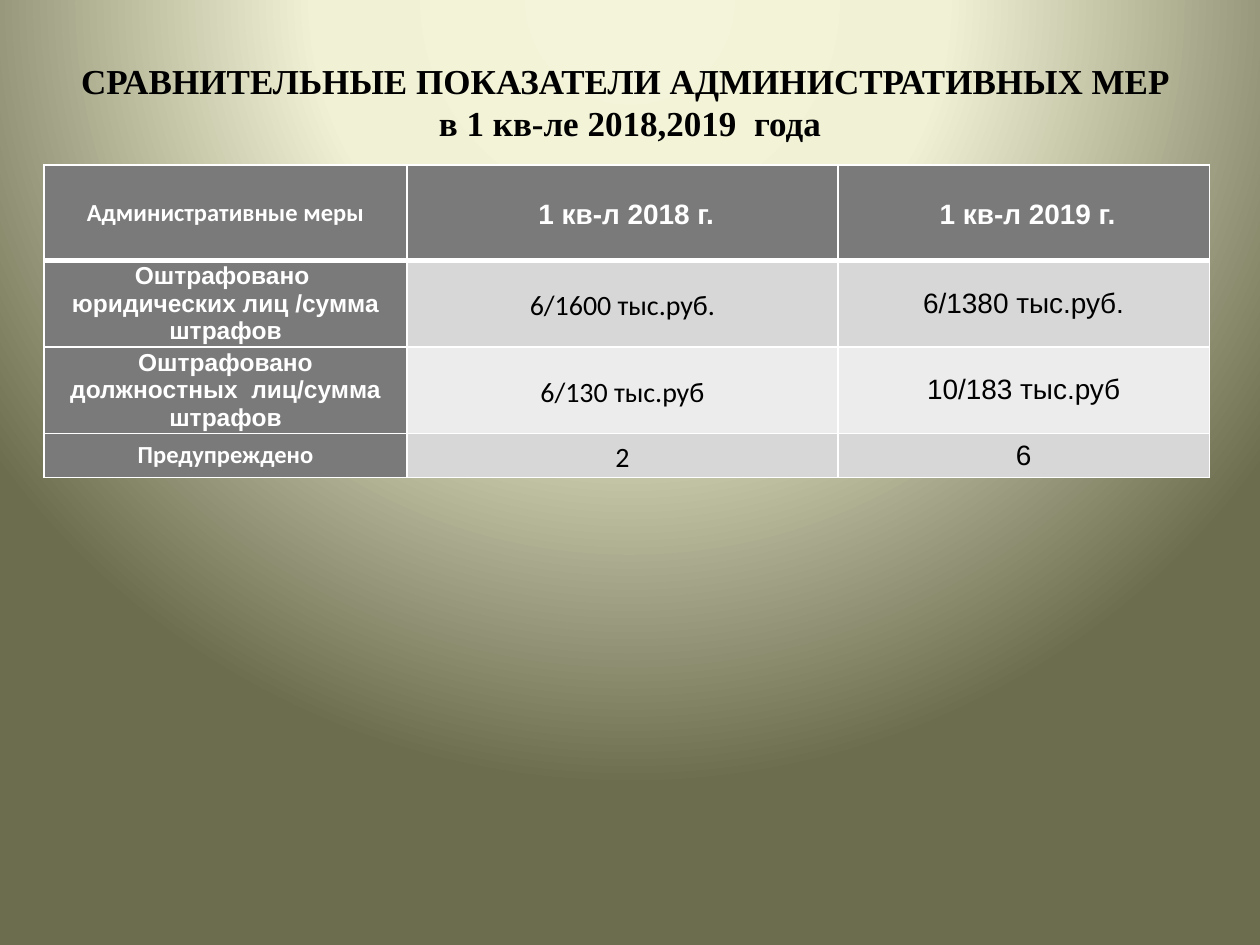
from pptx import Presentation
from pptx.dml.color import RGBColor
from pptx.enum.text import MSO_ANCHOR, PP_ALIGN
from pptx.oxml import parse_xml
from pptx.oxml.ns import nsdecls, qn
from pptx.util import Pt

CENTER = PP_ALIGN.CENTER
MIDDLE = MSO_ANCHOR.MIDDLE
TITLE_ONLY = 5

COLORS = {
    "glow": "F4F4DB", "cream": "F1F1D5", "olive": "6C6C4F",
    "head": "7A7A7A", "band": "D7D7D7", "pale": "ECECEC",
    "white": "FFFFFF", "black": "000000",
}
TITLE = "СРАВНИТЕЛЬНЫЕ ПОКАЗАТЕЛИ АДМИНИСТРАТИВНЫХ МЕР \vв 1 кв-ле 2018,2019  года"
ROWS = [
    ["Административные меры", " 1 кв-л 2018 г.", " 1 кв-л 2019 г."],
    ["Оштрафовано  юридических лиц /сумма штрафов", "6/1600 тыс.руб.", "6/1380 тыс.руб."],
    ["Оштрафовано должностных  лиц/сумма штрафов", "6/130 тыс.руб", "10/183 тыс.руб"],
    ["Предупреждено", "2", "6"],
]
FONTS = [
    ["Calibri", "Arial", "Arial"],
    ["Arial", "Calibri", "Arial"],
    ["Arial", "Calibri", "Arial"],
    ["Calibri", "Calibri", "Arial"],
]
COLUMN_WIDTHS = [207.36, 246.24, 212.4]
ROW_HEIGHTS = [54.4, 49.5, 49.5, 25.2]


def style_runs(paragraph, font_name, size, color, bold):
    """Format every run of a paragraph."""
    for run in paragraph.runs:
        run.font.name = font_name
        run.font.size = Pt(size)
        run.font.bold = bold
        run.font.color.rgb = RGBColor.from_string(COLORS[color])


def paint_background(slide):
    """Fill the slide with a radial glow centred above its top edge."""
    slide.background.fill.gradient()
    gradient = slide.element.find(".//" + qn("a:gradFill"))
    stops = "".join(
        f'<a:gs pos="{position * 1000}"><a:srgbClr val="{COLORS[name]}"/></a:gs>'
        for position, name in [(0, "glow"), (40, "cream"), (100, "olive")]
    )
    gradient.getparent().replace(gradient, parse_xml(
        f'<a:gradFill {nsdecls("a")} rotWithShape="1"><a:gsLst>{stops}</a:gsLst>'
        '<a:path path="circle"><a:fillToRect l="50000" t="-80000" r="50000" b="180000"/>'
        '</a:path></a:gradFill>'
    ))


def place_title(slide, left, top, width, height):
    """Place the heading in the title placeholder."""
    title = slide.shapes.title
    title.left, title.top, title.width, title.height = map(Pt, (left, top, width, height))
    text_frame = title.text_frame
    text_frame.text = TITLE
    text_frame.vertical_anchor = MIDDLE
    paragraph = text_frame.paragraphs[0]
    paragraph.alignment = CENTER
    style_runs(paragraph, "Times New Roman", 20, "black", True)


def set_borders(cell, top_width, bottom_width):
    """Draw white borders around a cell."""
    properties = cell._tc.get_or_add_tcPr()
    widths = {"lnL": 1, "lnR": 1, "lnT": top_width, "lnB": bottom_width}
    for index, (tag, width) in enumerate(widths.items()):
        properties.insert(index, parse_xml(
            f'<a:{tag} {nsdecls("a")} w="{Pt(width)}"><a:solidFill>'
            f'<a:srgbClr val="{COLORS["white"]}"/></a:solidFill></a:{tag}>'
        ))


def fill_cell(cell, row, column):
    """Write and format one cell according to its place in the table."""
    is_head = row == 0 or column == 0
    fill = "head" if is_head else "band" if row % 2 else "pale"
    cell.fill.solid()
    cell.fill.fore_color.rgb = RGBColor.from_string(COLORS[fill])
    cell.vertical_anchor = MIDDLE
    cell.margin_left = cell.margin_right = Pt(5)
    cell.margin_top = cell.margin_bottom = Pt(0)
    cell.text_frame.text = ROWS[row][column]
    paragraph = cell.text_frame.paragraphs[0]
    paragraph.alignment = CENTER
    if row == 0 or column < 2:
        paragraph.space_after = Pt(10)
        if column > 0:
            paragraph.line_spacing = 1.15
    style_runs(paragraph, FONTS[row][column], 16 if column else 14,
               "white" if is_head else "black", is_head)
    set_borders(cell, 3 if row == 1 else 1, 3 if row == 0 else 1)


def place_table(slide, left, top, width, height):
    """Place the table of administrative measures."""
    frame = slide.shapes.add_table(len(ROWS), len(COLUMN_WIDTHS),
                                   Pt(left), Pt(top), Pt(width), Pt(height))
    table = frame.table
    table.first_col = True
    for column, column_width in zip(table.columns, COLUMN_WIDTHS):
        column.width = Pt(column_width)
    for row, row_height in zip(table.rows, ROW_HEIGHTS):
        row.height = Pt(row_height)
    for row in range(len(ROWS)):
        for column in range(len(COLUMN_WIDTHS)):
            fill_cell(table.cell(row, column), row, column)


def main():
    """Build the slide and save it."""
    presentation = Presentation()
    presentation.slide_width, presentation.slide_height = Pt(720), Pt(540)
    slide = presentation.slides.add_slide(presentation.slide_layouts[TITLE_ONLY])
    paint_background(slide)
    place_title(slide, 36, 21.6, 648, 72.7)
    place_table(slide, 25.2, 94.3, sum(COLUMN_WIDTHS), sum(ROW_HEIGHTS))
    presentation.save("out.pptx")


if __name__ == "__main__":
    main()
